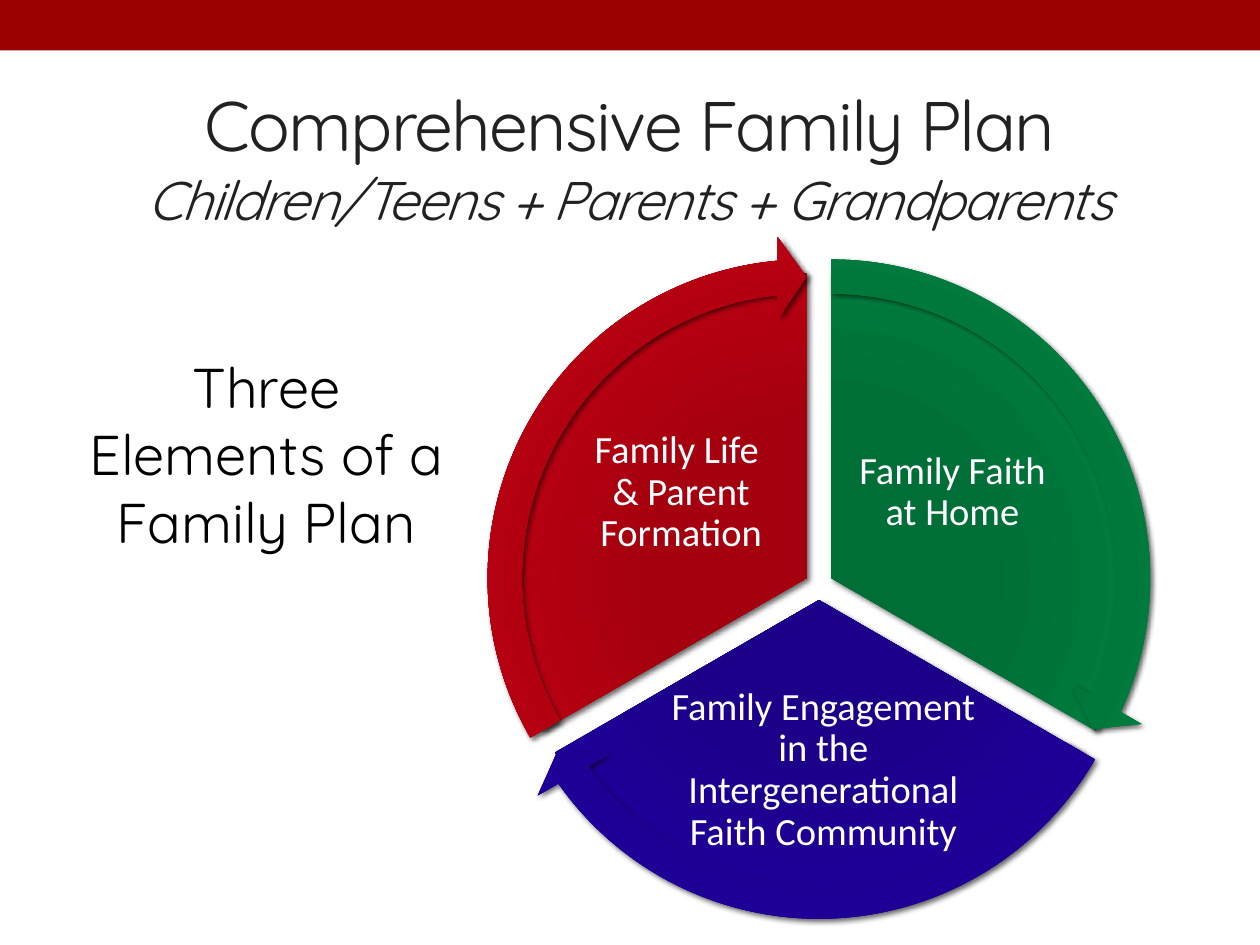
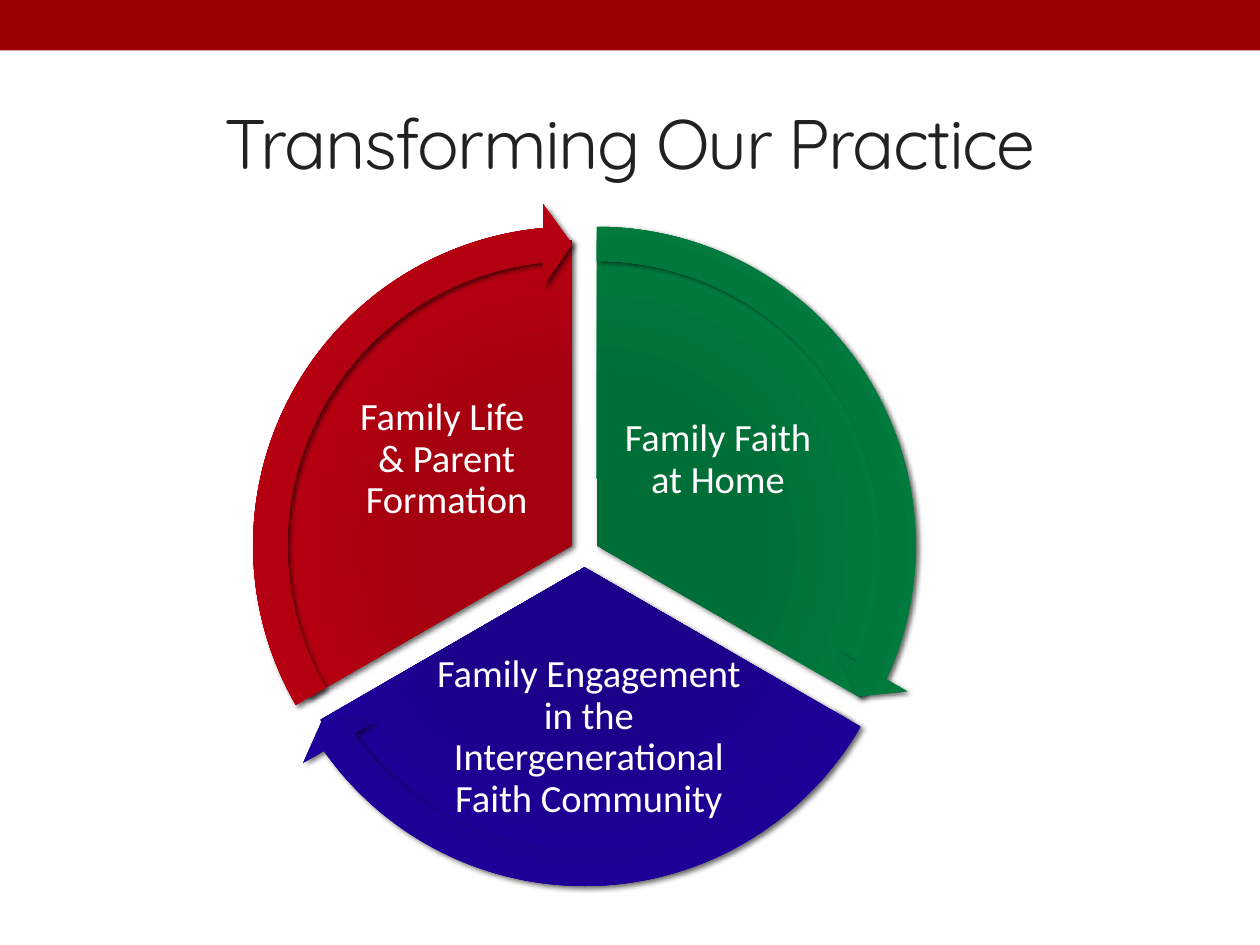
from dataclasses import dataclass
from math import cos, radians, sin

from pptx import Presentation
from pptx.dml.color import RGBColor
from pptx.enum.shapes import MSO_SHAPE
from pptx.enum.text import MSO_ANCHOR, PP_ALIGN
from pptx.oxml import parse_xml
from pptx.oxml.ns import nsdecls, qn
from pptx.util import Pt


@dataclass(frozen=True)
class Theme:
    band: str = "9B0101"
    ink: str = "212121"
    black: str = "000000"
    white: str = "FFFFFF"
    green: tuple = ("006E37", "006E37", "007A3D", "008040")
    blue: tuple = ("1C0089", "1C0089", "1F0099", "23059B")
    red: tuple = ("A4000F", "A4000F", "B70011", "B50B1B")
    stops: tuple = (0, 34, 70, 100)
    head: str = "Quicksand"
    body: str = "Calibri"
    title: int = 40
    sub: int = 31
    side: int = 32
    label: int = 22


THEME = Theme()
WIDTH, HEIGHT = 720, 540
PIE, RING = 348.5, 391.7  # diameters of the sectors and of the arrows
PUSH = 8.3  # how far each sector sits from the hub
TIP = 3.28  # angle taken by an arrowhead, in units of 5/3 degree

# colours, start and end angle in degrees, text, text centre from hub, text size
SECTORS = (
    (THEME.green, 270, 30, "Family Faith \vat Home ", (78.8, -53.1), (124.6, 103.7)),
    (THEME.blue, 30, 150, "Family Engagement in the Intergenerational Faith Community",
     (2.5, 105.6), (186.5, 91.4)),
    (THEME.red, 150, 270, "Family Life \v& Parent Formation", (-78.8, -53.1), (124.6, 103.7)),
)


def points(*values):
    return [Pt(value) for value in values]


def centred(x, y, wide, high):
    """Box of the given size around a centre."""
    return x - wide / 2, y - high / 2, wide, high


def add_text(shapes, box, text, font, size, colour, anchor=MSO_ANCHOR.TOP):
    frame = shapes.add_textbox(*points(*box)).text_frame
    frame.word_wrap = True
    frame.vertical_anchor = anchor
    frame.text = text
    para = frame.paragraphs[0]
    para.alignment = PP_ALIGN.CENTER
    for run in para.runs:
        run.font.name = font
        run.font.size = Pt(size)
        run.font.color.rgb = RGBColor.from_string(colour)
    return frame


def shade(shape, colours):
    """Give a shape a radial gradient and a soft shadow."""
    shape.line.fill.background()
    shape.fill.background()
    shape.shadow.inherit = False
    props = shape._element.spPr
    stops = "".join(
        f'<a:gs pos="{stop * 1000}"><a:srgbClr val="{colour}"/></a:gs>'
        for stop, colour in zip(THEME.stops, colours))
    props.replace(props.find(qn("a:noFill")), parse_xml(
        f'<a:gradFill {nsdecls("a")} rotWithShape="1"><a:gsLst>{stops}</a:gsLst>'
        '<a:path path="circle"><a:fillToRect l="100000" t="100000" r="100000" b="100000"/>'
        '</a:path></a:gradFill>'))
    props.find(qn("a:effectLst")).append(parse_xml(
        f'<a:outerShdw {nsdecls("a")} blurRad="{Pt(3)}" dist="{Pt(2)}" dir="2700000" '
        f'rotWithShape="0"><a:srgbClr val="{THEME.black}"><a:alpha val="60000"/>'
        '</a:srgbClr></a:outerShdw>'))


def add_round(shapes, kind, hub, span, size, tuning, colours):
    """Add a round shape pushed from the hub along the middle of its span."""
    start, end = span
    middle = radians(start + (end - start) % 360 / 2)
    x, y = hub[0] + PUSH * cos(middle), hub[1] + PUSH * sin(middle)
    shape = shapes.add_shape(kind, *points(*centred(x, y, size, size)))
    for index, value in enumerate(tuning):
        shape.adjustments[index] = value
    shade(shape, colours)


def add_label(shapes, box, text):
    frame = add_text(shapes, box, text, THEME.body, THEME.label, THEME.white,
                     MSO_ANCHOR.MIDDLE)
    frame.margin_left = frame.margin_right = Pt(2.2)
    frame.margin_top = frame.margin_bottom = Pt(2.2)
    frame.paragraphs[0].line_spacing = 0.9


def add_wheel(slide, hub):
    shapes = slide.shapes.add_group_shape().shapes
    for colours, start, end, text, shift, size in SECTORS:
        add_round(shapes, MSO_SHAPE.PIE, hub, (start, end), PIE,
                  (start * 0.6, end * 0.6), colours)
        add_label(shapes, centred(hub[0] + shift[0], hub[1] + shift[1], *size), text)
    for colours, start, end, *_ in SECTORS:
        add_round(shapes, MSO_SHAPE.CIRCULAR_ARROW, hub, (start, end), RING,
                  (0.05, TIP, end * 0.6 - TIP, start * 0.6, 0.06), colours)


def add_band(slide):
    band = slide.shapes.add_shape(MSO_SHAPE.RECTANGLE, *points(0, 0, WIDTH, 28.8))
    band.fill.solid()
    band.fill.fore_color.rgb = RGBColor.from_string(THEME.band)
    band.line.fill.background()
    band.shadow.inherit = False


def add_title(slide, high, text):
    """Add the title; what follows a line break becomes an italic subtitle."""
    frame = add_text(slide.shapes, (36, 41.8, 648, high), text, THEME.head,
                     THEME.title, THEME.ink, MSO_ANCHOR.MIDDLE)
    runs = frame.paragraphs[0].runs
    for run in runs:
        run.font._element.set("spc", "-100")
    for run in runs[1:]:
        run.font.size = Pt(THEME.sub)
        run.font.italic = True


def add_page(deck, title, high, hub):
    slide = deck.slides.add_slide(deck.slide_layouts[6])
    add_band(slide)
    add_wheel(slide, hub)
    add_title(slide, high, title)
    return slide


def main():
    deck = Presentation()
    deck.slide_width, deck.slide_height = points(WIDTH, HEIGHT)
    plan = add_page(
        deck, "Comprehensive Family Plan\vChildren/Teens + Parents + Grandparents",
        95, (468, 334.6))
    add_text(plan.shapes, (36, 198, 232.6, 123.8), "Three Elements of a Family Plan",
             THEME.head, THEME.side, THEME.black)
    add_page(deck, "Transforming Our Practice", 77.8, (334, 315.9))
    deck.save("out.pptx")


if __name__ == "__main__":
    main()
